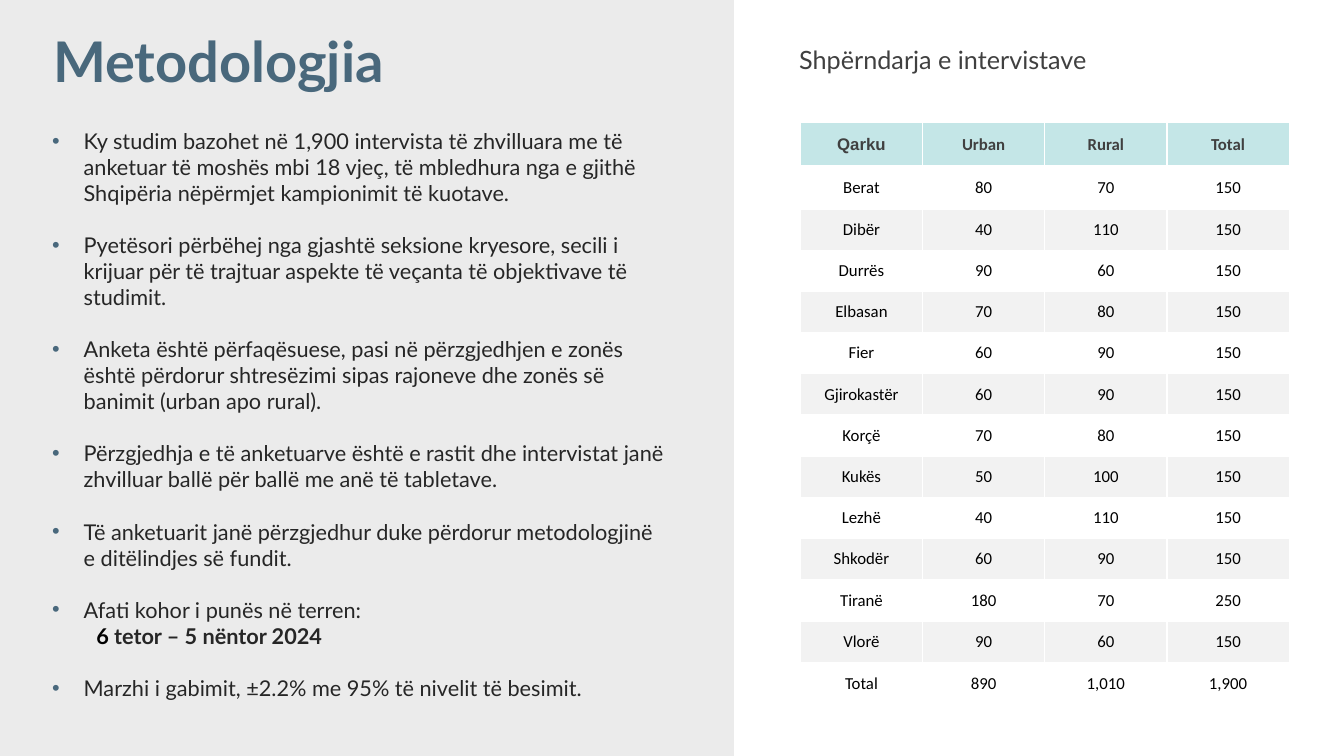
from dataclasses import dataclass

from lxml import etree
from pptx import Presentation
from pptx import util as u
from pptx.dml.color import RGBColor
from pptx.enum import shapes, text
from pptx.oxml import ns

Pt = u.Pt


@dataclass(frozen=True)
class Theme:
    accent: str = "49687C"
    panel: str = "D9D9D9"
    header: str = "C4E6E7"
    band: str = "F2F2F2"
    white: str = "FFFFFF"
    black: str = "000000"
    heading: str = "404040"
    body: str = "262626"
    font: str = "Lato"
    table_font: str = "Calibri"
    corner_font: str = "Arial"
    title_size: float = 40
    heading_size: float = 18
    body_size: float = 15.5
    table_size: float = 12


THEME = Theme()

BULLETS = [
    "Ky studim bazohet në 1,900 intervista të zhvilluara me të anketuar të moshës mbi 18 vjeç, "
    "të mbledhura nga e gjithë Shqipëria nëpërmjet kampionimit të kuotave.",
    "Pyetësori përbëhej nga gjashtë seksione kryesore, secili i krijuar për të trajtuar aspekte "
    "të veçanta të objektivave të studimit.",
    "Anketa është përfaqësuese, pasi në përzgjedhjen e zonës është përdorur shtresëzimi sipas "
    "rajoneve dhe zonës së banimit (urban apo rural).",
    "Përzgjedhja e të anketuarve është e rastit dhe intervistat janë zhvilluar ballë për ballë "
    "me anë të tabletave.",
    "Të anketuarit janë përzgjedhur duke përdorur metodologjinë e ditëlindjes së fundit.",
    "Afati kohor i punës në terren:",
    "Marzhi i gabimit, ±2.2% me 95% të nivelit të besimit.",
]
FIELDWORK = 5  # the bullet that the dates follow

HEADERS = ["Qarku", "Urban", "Rural", "Total"]
COUNTIES = [
    ("Berat", 80, 70), ("Dibër", 40, 110), ("Durrës", 90, 60), ("Elbasan", 70, 80),
    ("Fier", 60, 90), ("Gjirokastër", 60, 90), ("Korçë", 70, 80), ("Kukës", 50, 100),
    ("Lezhë", 40, 110), ("Shkodër", 60, 90), ("Tiranë", 180, 70), ("Vlorë", 90, 60),
]


def add_span(para, words, size, color, font=THEME.font, bold=False):
    span = para.add_run()
    span.text = words
    span.font.size = Pt(size)
    span.font.name = font
    span.font.bold = bold
    span.font.color.rgb = RGBColor.from_string(color)


def add_text_frame(page, left, top, width, height):
    box = page.shapes.add_textbox(Pt(left), Pt(top), Pt(width), Pt(height))
    box.text_frame.word_wrap = True
    return box.text_frame


def indent(para, margin, first=0, bullet_color=None):
    props = para._p.get_or_add_pPr()
    props.set("marL", str(Pt(margin)))
    props.set("indent", str(Pt(first)))
    if bullet_color:
        color = etree.SubElement(props, ns.qn("a:buClr"))
        etree.SubElement(color, ns.qn("a:srgbClr"), val=bullet_color)
        etree.SubElement(props, ns.qn("a:buFont"), typeface="Arial")
        etree.SubElement(props, ns.qn("a:buChar"), char="•")


def add_panel(page, left, top, width, height):
    panel = page.shapes.add_shape(
        shapes.MSO_SHAPE.RECTANGLE, Pt(left), Pt(top), Pt(width), Pt(height))
    panel.shadow.inherit = False
    panel.line.fill.background()
    panel.fill.solid()
    panel.fill.fore_color.rgb = RGBColor.from_string(THEME.panel)
    color = panel._element.spPr.find(".//" + ns.qn("a:srgbClr"))
    etree.SubElement(color, ns.qn("a:alpha"), val="50000")


def add_title(page, left, top, width, height):
    frame = add_text_frame(page, left, top, width, height)
    frame.vertical_anchor = text.MSO_ANCHOR.MIDDLE
    para = frame.paragraphs[0]
    para.line_spacing = 0.9
    add_span(para, "Metodologjia", THEME.title_size, THEME.accent, bold=True)


def add_bullets(page, left, top, width, height):
    frame = add_text_frame(page, left, top, width, height)
    for index, words in enumerate(BULLETS):
        para = frame.add_paragraph() if index else frame.paragraphs[0]
        para.space_before = Pt(1.2 * THEME.body_size if index else 0)
        indent(para, 22.5, -22.5, THEME.accent)
        add_span(para, words, THEME.body_size, THEME.body)
        if index == FIELDWORK:
            dates = frame.add_paragraph()
            indent(dates, 31.5)
            add_span(dates, "6 ", THEME.body_size, THEME.black, bold=True)
            add_span(dates, "tetor – 5 nëntor 2024", THEME.body_size, THEME.body, bold=True)


def add_heading(page, left, top, width, height):
    para = add_text_frame(page, left, top, width, height).paragraphs[0]
    para.alignment = text.PP_ALIGN.JUSTIFY
    add_span(para, "Shpërndarja e intervistave", THEME.heading_size, THEME.heading)


def add_borders(cell):
    props = cell._tc.get_or_add_tcPr()
    for place, side in enumerate(("lnL", "lnR", "lnT", "lnB")):
        line = etree.Element(ns.qn("a:" + side), w=str(Pt(1)))
        fill = etree.SubElement(line, ns.qn("a:solidFill"))
        etree.SubElement(fill, ns.qn("a:srgbClr"), val=THEME.white)
        props.insert(place, line)


def fill_cell(cell, words, fill, color, font, bold):
    cell.margin_left = cell.margin_right = cell.margin_top = cell.margin_bottom = 0
    cell.vertical_anchor = text.MSO_ANCHOR.MIDDLE
    if fill:
        cell.fill.solid()
        cell.fill.fore_color.rgb = RGBColor.from_string(fill)
    else:
        cell.fill.background()
    add_borders(cell)
    para = cell.text_frame.paragraphs[0]
    para.alignment = text.PP_ALIGN.CENTER
    add_span(para, words, THEME.table_size, color, font, bold)


def add_interview_table(page, left, top, width, height):
    urban = sum(county[1] for county in COUNTIES)
    rural = sum(county[2] for county in COUNTIES)
    rows = [HEADERS] + [
        (name, f"{city:,}", f"{village:,}", f"{city + village:,}")
        for name, city, village in COUNTIES + [("Total", urban, rural)]]
    last = len(rows) - 1
    table = page.shapes.add_table(
        len(rows), len(HEADERS), Pt(left), Pt(top), Pt(width), Pt(height)).table
    table.first_row = table.horz_banding = False
    for column in table.columns:
        column.width = Pt(width / len(HEADERS))

    # The header, first and last rows are a little taller than the rest
    tall = 30.8
    short = (height - 3 * tall) / (len(rows) - 3)
    for index, values in enumerate(rows):
        table.rows[index].height = Pt(tall if index in (0, 1, last) else short)
        header = index == 0
        fill = THEME.header if header else None if index % 2 else THEME.band
        if index == last:
            fill = None
        color = THEME.heading if header else THEME.black
        for column, words in enumerate(values):
            corner = header and column == 0
            font = THEME.corner_font if corner else THEME.table_font
            fill_cell(table.cell(index, column), words, fill, color, font, header)


def add_methodology_page(deck):
    page = deck.slides.add_slide(deck.slide_layouts[6])
    # Left half: method
    add_panel(page, 0, 0, 524.2, 540)
    add_title(page, 31, 9.4, 863, 73.4)
    add_bullets(page, 30.2, 87.8, 452.2, 420.5)
    # Right half: sample
    add_heading(page, 563.8, 28, 229, 29)
    add_interview_table(page, 571.7, 87.8, 349.2, 416.2)


def main():
    deck = Presentation()
    deck.slide_width, deck.slide_height = Pt(960), Pt(540)
    add_methodology_page(deck)
    deck.save("out.pptx")


if __name__ == "__main__":
    main()
